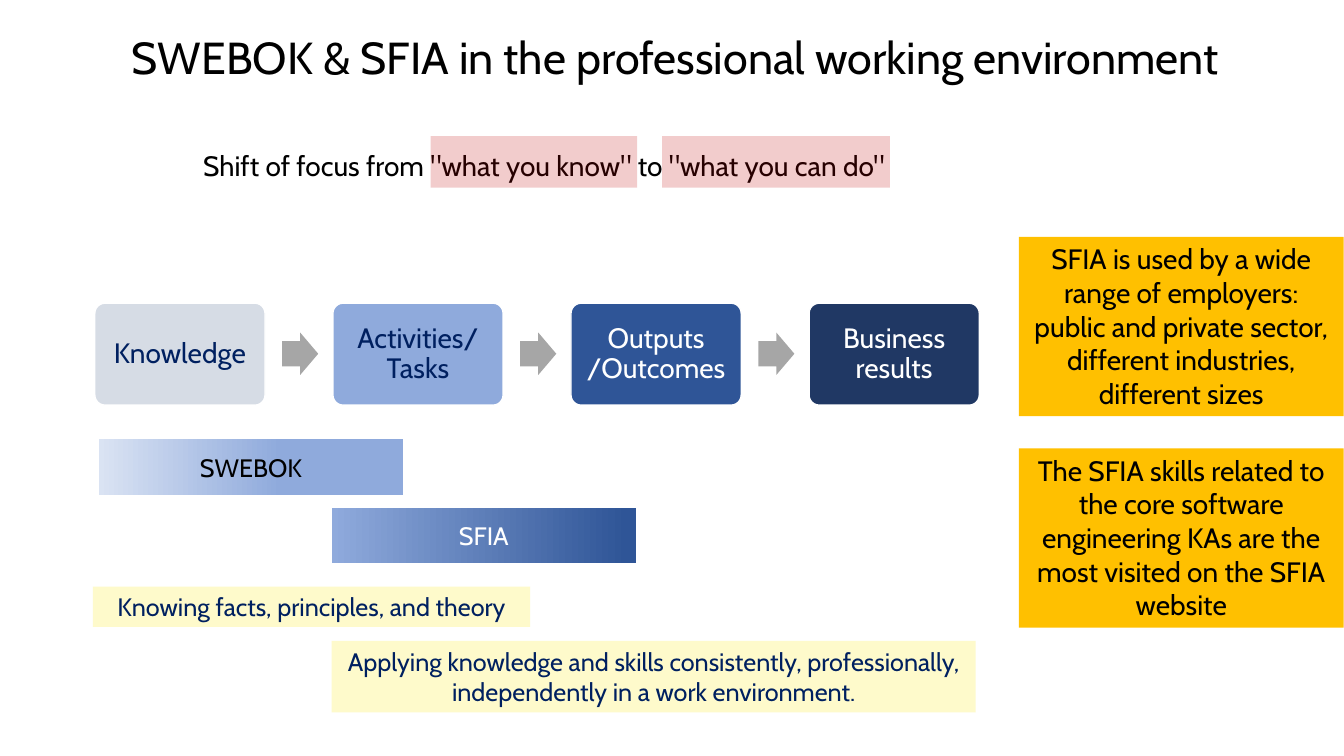
"""Build the slide on SWEBOK and SFIA in the professional working environment."""
from dataclasses import dataclass

from lxml import etree
from pptx import Presentation
from pptx.dml.color import RGBColor
from pptx.enum.shapes import MSO_SHAPE
from pptx.enum.text import MSO_ANCHOR, PP_ALIGN
from pptx.oxml.ns import qn
from pptx.util import Cm, Pt

RECTANGLE = MSO_SHAPE.RECTANGLE
ROUNDED = MSO_SHAPE.ROUNDED_RECTANGLE
ARROW = MSO_SHAPE.RIGHT_ARROW
TOP, MIDDLE = MSO_ANCHOR.TOP, MSO_ANCHOR.MIDDLE
CENTER = PP_ALIGN.CENTER


@dataclass(frozen=True)
class Theme:
    font: str = "Cabin"
    title_size: int = 32
    large_size: int = 20
    small_size: int = 18
    black: str = "000000"
    white: str = "FFFFFF"
    navy: str = "002060"
    mist: str = "D6DCE5"
    pale_blue: str = "DAE3F3"
    light_blue: str = "8FAADC"
    blue: str = "2F5597"
    dark_blue: str = "203864"
    gray: str = "A6A6A6"
    cream: str = "FEFACB"
    gold: str = "FFC000"
    red: str = "C00000"


theme = Theme()


def add_block(kind, left, top, width, height, color):
    block = page.shapes.add_shape(kind, Cm(left), Cm(top), Cm(width), Cm(height))
    block.shadow.inherit = False
    block.fill.solid()
    block.fill.fore_color.rgb = RGBColor.from_string(color)
    block.line.fill.background()
    return block


def write(box, text, size, color, anchor=MIDDLE):
    frame = box.text_frame
    frame.word_wrap = True
    frame.vertical_anchor = anchor
    para = frame.paragraphs[0]
    para.text = text
    para.alignment = CENTER
    para.font.name = theme.font
    para.font.size = Pt(size)
    para.font.color.rgb = RGBColor.from_string(color)
    return para


deck = Presentation()
deck.slide_width, deck.slide_height = Cm(33.87), Cm(19.05)
page = deck.slides.add_slide(deck.slide_layouts[6])

title = page.shapes.add_textbox(Cm(0.46), Cm(0.41), Cm(33.12), Cm(2.03))
write(title, "SWEBOK & SFIA in the professional working environment",
      theme.title_size, theme.black)

focus = add_block(RECTANGLE, 2.08, 3, 23.27, 2.34, theme.white)
write(focus, 'Shift of focus from "what you know" to "what you can do"',
      theme.large_size, theme.black)

for left, width in ((10.85, 5.21), (16.69, 5.74)):
    highlight = add_block(RECTANGLE, left, 3.43, width, 1.3, theme.red)
    red = highlight.fill.fore_color._xFill.find(qn("a:srgbClr"))
    etree.SubElement(red, qn("a:alpha")).set("val", "20000")

steps = (
    ("Knowledge", theme.mist, theme.navy),
    ("Activities/\nTasks", theme.light_blue, theme.navy),
    ("Outputs\n/Outcomes", theme.blue, theme.white),
    ("Business results", theme.dark_blue, theme.white),
)
STEP_LEFT, STEP_PITCH = 2.39, 6
for index, (label, color, text_color) in enumerate(steps):
    left = STEP_LEFT + index * STEP_PITCH
    step = add_block(ROUNDED, left, 7.64, 4.29, 2.57, color)
    step.adjustments[0] = 0.1
    step.line.color.rgb = RGBColor.from_string(theme.white)
    step.line.width = Pt(1)
    frame = step.text_frame
    frame.margin_left = frame.margin_right = Cm(0.2)
    frame.margin_top = frame.margin_bottom = Cm(0.2)
    write(step, label, theme.large_size, text_color).line_spacing = 0.9
    if index < len(steps) - 1:
        arrow = add_block(ARROW, left + 4.72, 8.38, 0.91, 1.07, theme.gray)
        arrow.adjustments[0] = 0.6
        arrow.adjustments[1] = 0.5

ranges = (
    ("SWEBOK", 2.49, 11.07, theme.pale_blue, theme.light_blue, 0.6, theme.black),
    ("SFIA", 8.36, 12.8, theme.light_blue, theme.blue, 0.97, theme.white),
)
for label, left, top, start, end, end_position, text_color in ranges:
    bar = add_block(RECTANGLE, left, top, 7.67, 1.4, start)
    bar.fill.gradient()
    bar.fill.gradient_angle = 0
    for stop, color, position in zip(bar.fill.gradient_stops, (start, end), (0, end_position)):
        stop.color.rgb = RGBColor.from_string(color)
        stop.position = position
    write(bar, label, theme.small_size, text_color)

notes = (
    ("Knowing facts, principles, and theory", 2.34, 14.78, 11.02, 1.02,
     theme.cream, theme.small_size, theme.navy),
    ("Applying knowledge and skills consistently, professionally, "
     "independently in a work environment.", 8.36, 16.15, 16.23, 1.8,
     theme.cream, theme.small_size, theme.navy),
    ("SFIA is used by a wide range of employers: public and private sector, "
     "different industries, different sizes", 25.68, 5.97, 8.18, 4.52,
     theme.gold, theme.large_size, theme.black),
    ("The SFIA skills related to the core software engineering KAs are the "
     "most visited on the SFIA website", 25.68, 11.3, 8.18, 4.52,
     theme.gold, theme.large_size, theme.black),
)
for text, left, top, width, height, color, size, text_color in notes:
    note = add_block(RECTANGLE, left, top, width, height, color)
    write(note, text, size, text_color, TOP)

deck.save("out.pptx")
